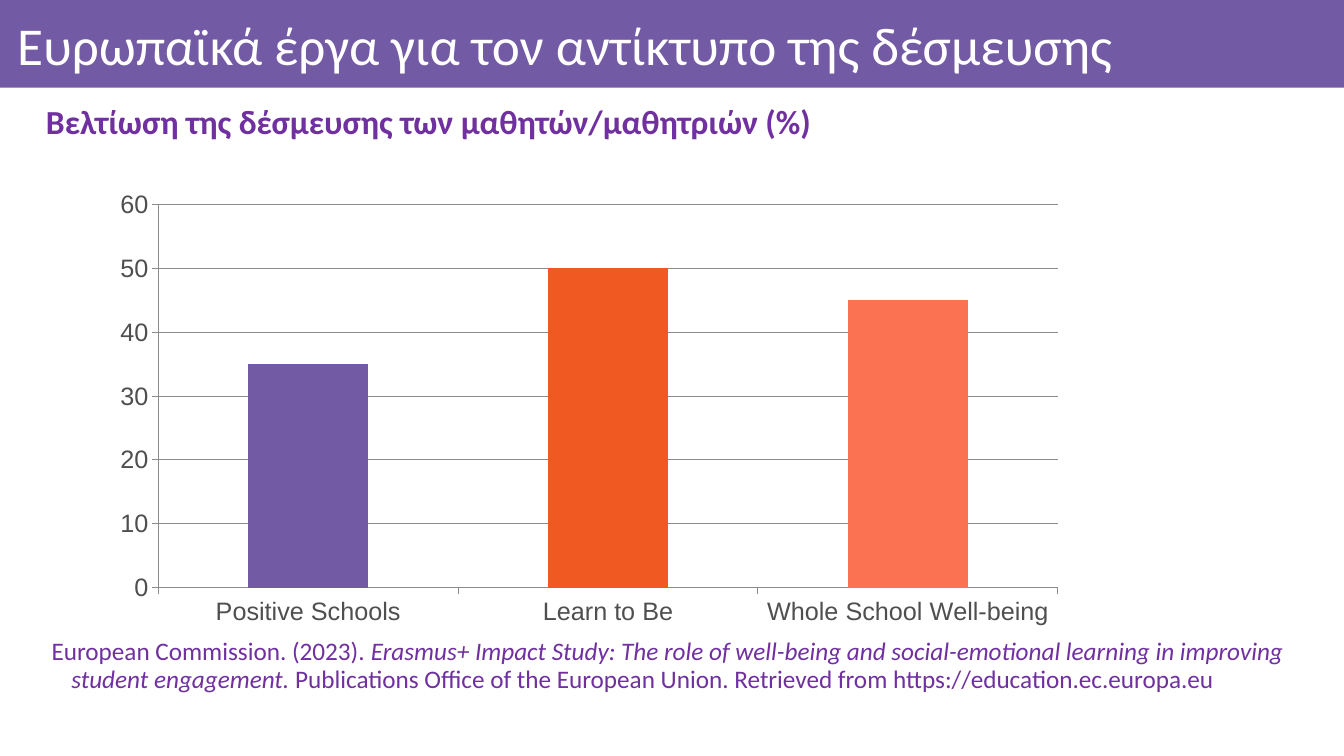
"""Build the slide on European projects and the impact of engagement."""
from pptx import Presentation
from pptx.chart.data import CategoryChartData
from pptx.dml.color import RGBColor
from pptx.enum.chart import XL_CHART_TYPE as ChartType, XL_TICK_MARK as Tick
from pptx.enum.shapes import MSO_SHAPE as Shape
from pptx.enum.text import MSO_ANCHOR as Anchor, PP_ALIGN as Align
from pptx.util import Cm, Pt

VIOLET, PURPLE, ORANGE, CORAL = "735AA5", "7030A0", "F05A22", "FA7252"
GREY, LINE_GREY, WHITE = "4F4F50", "8B8B8B", "FFFFFF"


def color(value):
    return RGBColor.from_string(value)


def format_text(shape, size, text_color, anchor, bold=False):
    frame = shape.text_frame
    frame.word_wrap = True
    frame.vertical_anchor = anchor
    para = frame.paragraphs[0]
    para.alignment = Align.LEFT
    para.line_spacing = 0.9
    para.font.name = "Calibri"
    para.font.size = Pt(size)
    para.font.bold = bold
    para.font.color.rgb = color(text_color)
    return para


deck = Presentation()
deck.slide_width, deck.slide_height = Cm(33.87), Cm(19.05)
page = deck.slides.add_slide(deck.slide_layouts[5])

title = page.shapes.title
title.left, title.top, title.width, title.height = Cm(0.28), Cm(0.23), Cm(33.17), Cm(1.98)
title.text = "Ευρωπαϊκά έργα για τον αντίκτυπο της δέσμευσης"
format_text(title, 38, WHITE, Anchor.MIDDLE)
frame = title.text_frame
frame.margin_left = frame.margin_right = frame.margin_top = frame.margin_bottom = Cm(0.15)

band = page.shapes.add_shape(Shape.RECTANGLE, 0, 0, deck.slide_width, Cm(2.21))
band.shadow.inherit = False
band.fill.solid()
band.fill.fore_color.rgb = color(VIOLET)
band.line.fill.background()
title.element.addprevious(band.element)

subtitle = page.shapes.add_textbox(Cm(0.91), Cm(2.36), Cm(32.54), Cm(1.52))
subtitle.text_frame.text = "Βελτίωση της δέσμευσης των μαθητών/μαθητριών (%)"
format_text(subtitle, 24, PURPLE, Anchor.MIDDLE, bold=True)

data = CategoryChartData()
data.categories = ["Positive Schools", "Learn to Be", "Whole School Well-being"]
data.add_series("Series 1", [35, 50, 45])
chart = page.shapes.add_chart(
    ChartType.COLUMN_CLUSTERED, Cm(2.54), Cm(4.57), Cm(24.61), Cm(11.43), data
).chart
chart.has_legend = False
chart.has_title = False
chart.font.name = "Arial"
chart.font.size = Pt(18)
chart.font.color.rgb = color(GREY)

values = chart.value_axis
values.minimum_scale, values.maximum_scale, values.major_unit = 0, 60, 10
values.has_major_gridlines = True
for axis in (chart.category_axis, values):
    axis.major_tick_mark = Tick.OUTSIDE
    axis.minor_tick_mark = Tick.NONE
for lined in (chart.category_axis, values, values.major_gridlines):
    lined.format.line.color.rgb = color(LINE_GREY)
    lined.format.line.width = Pt(0.75)

plot = chart.plots[0]
plot.gap_width = 150
plot.vary_by_categories = False
for index, bar_color in enumerate((VIOLET, ORANGE, CORAL)):
    fill = plot.series[0].points[index].format.fill
    fill.solid()
    fill.fore_color.rgb = color(bar_color)

citation = page.shapes.add_textbox(Cm(0.28), Cm(15.98), Cm(33.17), Cm(1.7))
para = format_text(citation, 18, PURPLE, Anchor.TOP)
indents = para._p.get_or_add_pPr()
indents.set("marL", str(Cm(1.27)))
indents.set("indent", str(Cm(-0.5)))
for text, italic in (
    ("European Commission. (2023). ", False),
    ("Erasmus+ Impact Study: The role of well-being and social-emotional learning "
     "in improving student engagement.", True),
    (" Publications Office of the European Union. Retrieved from "
     "https://education.ec.europa.eu", False),
):
    span = para.add_run()
    span.text = text
    span.font.italic = italic

deck.save("out.pptx")
